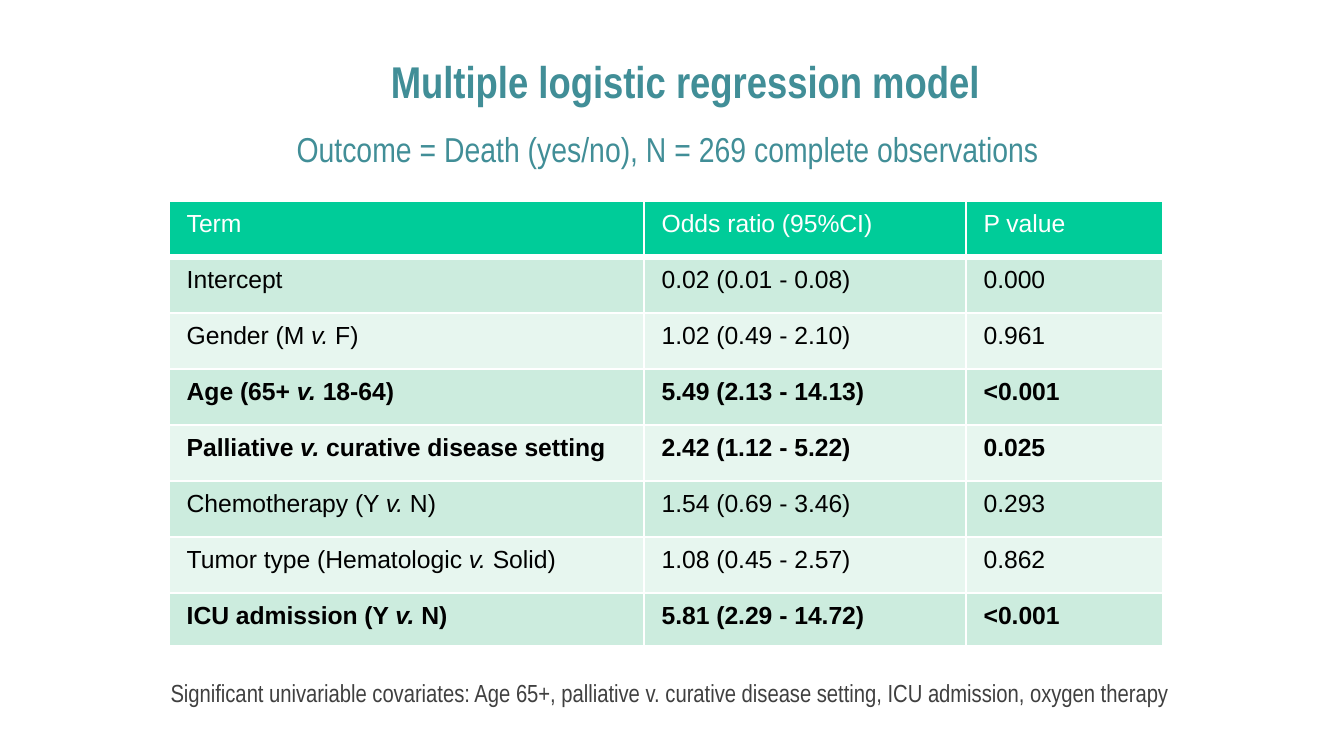
from lxml import etree
from pptx import Presentation
from pptx import util as u
from pptx.dml.color import RGBColor
from pptx.enum import text
from pptx.oxml.ns import qn

PX = 5143  # EMU in one px
HUES = {"teal": "418E97", "head": "00CC99", "dark": "CCECDE", "pale": "E7F6EF",
        "white": "FFFFFF", "black": "000000", "grey": "404040"}


def add_run(para, words, size, face, hue, bold=False, slant=False):
    run = para.add_run()
    run.text = words
    font = run.font
    font.size, font.name = u.Pt(size), face
    font.bold, font.italic = bold, slant
    font.color.rgb = RGBColor.from_string(HUES[hue])


def add_edges(cell, below):
    """Give a filled cell white borders, 1 pt apart from the bottom one."""
    props = cell._tc.get_or_add_tcPr()
    for spot, (side, width) in enumerate(zip("LRTB", (1, 1, 1, below))):
        line = etree.Element(qn("a:ln" + side), w=str(u.Pt(width)))
        fill = etree.SubElement(line, qn("a:solidFill"))
        etree.SubElement(fill, qn("a:srgbClr"), val=HUES["white"])
        props.insert(spot, line)


deck = Presentation()
deck.slide_width, deck.slide_height = 1344 * PX, 756 * PX
slide = deck.slides.add_slide(deck.slide_layouts[5])

# Title, subtitle and footnote
title = slide.shapes.title
sub = slide.shapes.add_textbox(0, 0, 0, 0)
foot = slide.shapes.add_textbox(0, 0, 0, 0)
lines = [
    (title, (373, 50, 916, 55), "Multiple logistic regression model", 18, "teal", True, 0.93),
    (sub, (279, 123, 823, 55), "Outcome = Death (yes/no), N = 269 complete observations",
     14, "teal", False, 0.93),
    (foot, (153, 669, 1038, 48), "Significant univariable covariates: Age 65+, palliative v. "
     "curative disease setting, ICU admission, oxygen therapy", 10, "grey", False, 1.0),
]
for shape, place, words, size, hue, bold, space in lines:
    shape.left, shape.top, shape.width, shape.height = [n * PX for n in place]
    frame = shape.text_frame
    frame.auto_size = text.MSO_AUTO_SIZE.NONE
    frame.vertical_anchor = text.MSO_ANCHOR.TOP
    frame.word_wrap = shape is not foot
    para = frame.paragraphs[0]
    para.alignment = text.PP_ALIGN.LEFT
    para.line_spacing = space
    add_run(para, words, size, "Arial Narrow", hue, bold)
foot.text_frame.auto_size = text.MSO_AUTO_SIZE.SHAPE_TO_FIT_TEXT

# Model table: label runs (the middle one slanted), odds ratio, P value, bold
rows = [
    (["Term"], "Odds ratio (95%CI)", "P value", False),
    (["Intercept"], "0.02 (0.01 - 0.08)", "0.000", False),
    (["Gender (M ", "v.", " F)"], "1.02 (0.49 - 2.10)", "0.961", False),
    (["Age (65+ ", "v.", " 18-64)"], "5.49 (2.13 - 14.13)", "<0.001", True),
    (["Palliative ", "v. ", "curative disease setting"], "2.42 (1.12 - 5.22)", "0.025", True),
    (["Chemotherapy (Y ", "v.", " N)"], "1.54 (0.69 - 3.46)", "0.293", False),
    (["Tumor type (Hematologic ", "v.", " Solid)"], "1.08 (0.45 - 2.57)", "0.862", False),
    (["ICU admission (Y ", "v.", " N)"], "5.81 (2.29 - 14.72)", "<0.001", True),
]
cols = [475, 322, 197]
highs = [56] * 7 + [53]
table = slide.shapes.add_table(len(rows), len(cols), 169 * PX, 201 * PX,
                               sum(cols) * PX, sum(highs) * PX).table
table.horz_banding = False
for col, width in zip(table.columns, cols):
    col.width = width * PX
for r, (term, odds, prob, bold) in enumerate(rows):
    table.rows[r].height = highs[r] * PX
    band = "head" if r == 0 else "dark" if r % 2 else "pale"
    for c, runs in enumerate([term, [odds], [prob]]):
        cell = table.cell(r, c)
        cell.fill.solid()
        cell.fill.fore_color.rgb = RGBColor.from_string(HUES[band])
        add_edges(cell, 1 if r else 3)
        for k, words in enumerate(runs):
            add_run(cell.text_frame.paragraphs[0], words, 10, "Arial",
                    "black" if r else "white", bold, k == 1)

deck.save("out.pptx")
